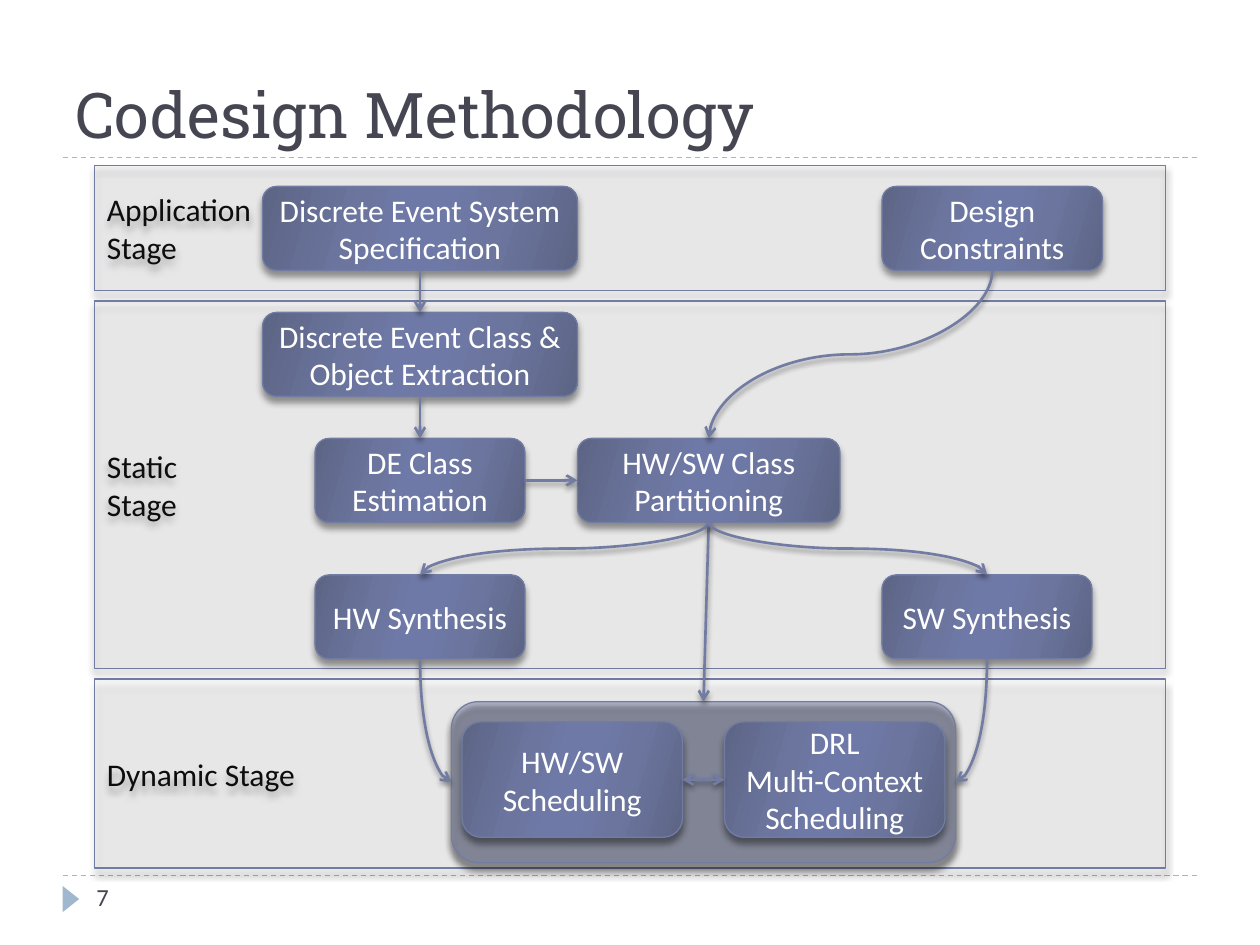
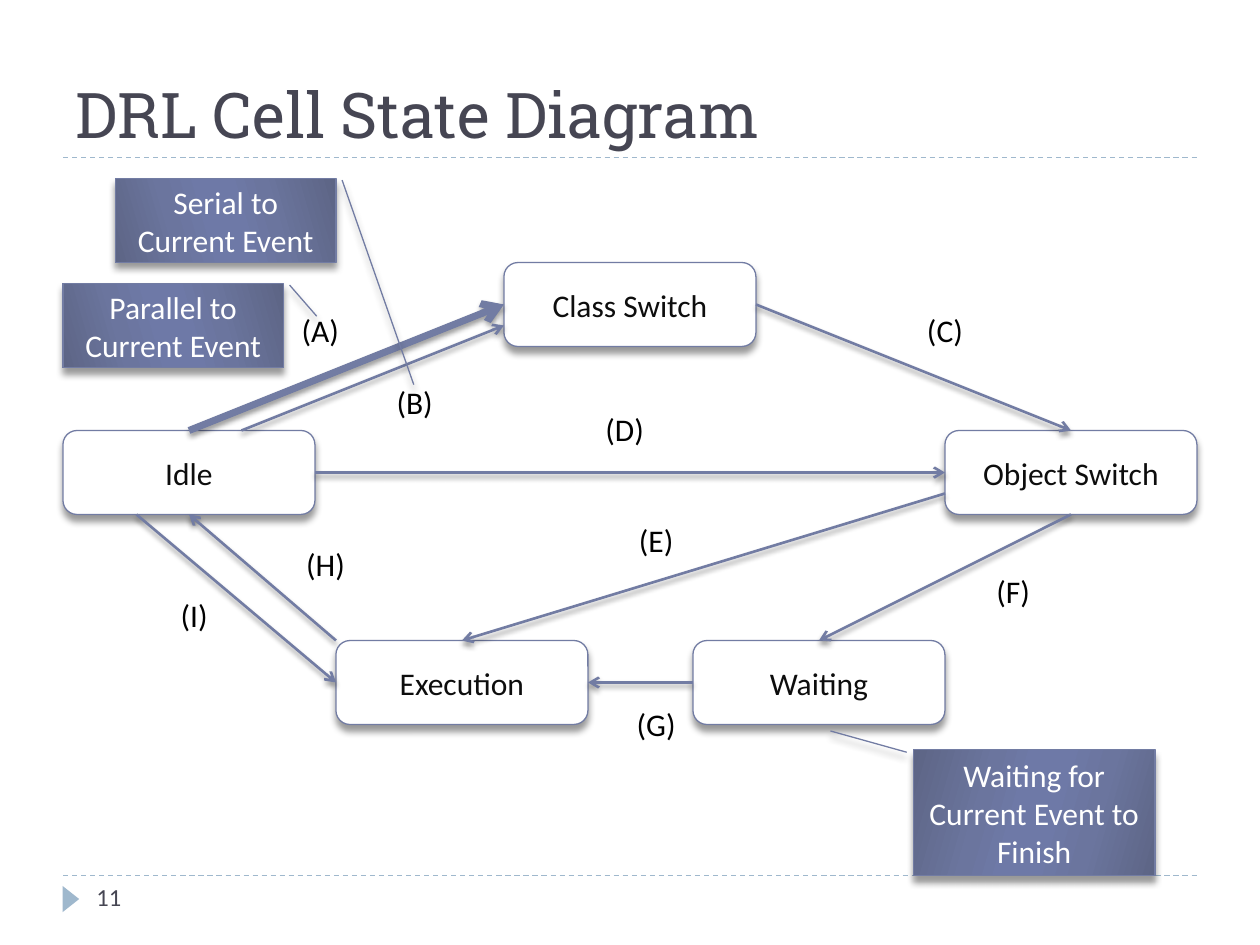
from dataclasses import dataclass
from typing import Any

from lxml import etree
from pptx import Presentation
from pptx import util as u
from pptx.dml import color
from pptx.enum import dml, shapes, text
from pptx.oxml import ns

Pt = u.Pt
SHAPE = shapes.MSO_SHAPE
LINK = shapes.MSO_CONNECTOR
MID = text.MSO_ANCHOR.MIDDLE
TOP, LEFT, BOTTOM, RIGHT = range(4)

HUES = {
    "white": "FFFFFF", "black": "000000", "ink": "0D0D0D", "title": "464653",
    "rule": "9FB8CD", "edge": "727CA3", "band": "D8D8DE",
    "rim": "5D6585", "mid": "6B759E", "core": "6E79A7",
}
SHEEN = [(0, "rim"), (30, "mid"), (45, "core"), (55, "core"), (73, "mid"), (100, "rim")]


def rgb(hue):
    return color.RGBColor.from_string(HUES[hue])


def sub(parent, tag, **attrs):
    """Append a DrawingML child element."""
    return etree.SubElement(parent, ns.qn("a:" + tag), {k: str(v) for k, v in attrs.items()})


def cast(shape, blur=0, dist=0):
    """Give a shape or connector a soft drop shadow, or none when blur is 0."""
    props = shape._element.spPr
    for old in props.findall(ns.qn("a:effectLst")):
        props.remove(old)
    list_ = sub(props, "effectLst")
    if blur:
        outer = sub(list_, "outerShdw", blurRad=Pt(blur), dist=Pt(dist),
                    dir=5400000, rotWithShape=0)
        sub(sub(outer, "srgbClr", val=HUES["black"]), "alpha", val=40000)


def paint(shape, fill, alpha=100):
    """Fill with one hue, or with the blue sheen."""
    props = shape._element.spPr
    if fill == "sheen":
        shape.fill.gradient()
        shape.fill.gradient_angle = 344
        stops = props.find(".//" + ns.qn("a:gsLst"))
        for old in list(stops):
            stops.remove(old)
        for pos, hue in SHEEN:
            sub(sub(stops, "gs", pos=pos * 1000), "srgbClr", val=HUES[hue])
        return
    shape.fill.solid()
    shape.fill.fore_color.rgb = rgb(fill)
    if alpha < 100:
        tint = props.find(ns.qn("a:solidFill"))[0]
        sub(tint, "alpha", val=alpha * 1000)


def write(shape, words, size=18, font="Calibri", hue="ink", align="CENTER", anchor=MID):
    frame = shape.text_frame
    frame.word_wrap = True
    frame.vertical_anchor = anchor
    frame.text = words
    for para in frame.paragraphs:
        para.alignment = getattr(text.PP_ALIGN, align)
        for run in para.runs:
            run.font.size = Pt(size)
            run.font.name = font
            run.font.color.rgb = rgb(hue)


def spot(end):
    """Turn an (x, y) pair or a (shape, side) pair into a point in points."""
    shape, side = end
    if isinstance(shape, (int, float)):
        return end
    part_x, part_y = {TOP: (.5, 0), LEFT: (0, .5), BOTTOM: (.5, 1), RIGHT: (1, .5)}[side]
    return (u.Emu(shape.left + int(shape.width * part_x)).pt,
            u.Emu(shape.top + int(shape.height * part_y)).pt)


@dataclass
class Deck:
    prs: Any
    slide: Any = None

    def start(self, title, number):
        """Open a slide with the shared rules, marker, title and number."""
        self.slide = self.prs.slides.add_slide(self.prs.slide_layouts[6])
        for y in (500.5, 90):
            rule = self.link((36, y), (684, y), hue="rule", width=.75, tail=False, shade=False)
            rule.line.dash_style = dml.MSO_LINE.DASH
        mark = self.shape(SHAPE.ISOSCELES_TRIANGLE, 33, 509, 15, 9.5, "rule", edge=None, shade=False)
        mark.rotation = 90
        self.label(title, 36, 12, 648, 78, size=36, font="Roboto Slab", hue="title",
                   align="LEFT", anchor=text.MSO_ANCHOR.BOTTOM)
        self.label(number, 48, 500.5, 156, 29, size=14, hue="title", align="LEFT")

    def shape(self, kind, x, y, w, h, fill, alpha=100, edge="edge", shade=True):
        item = self.slide.shapes.add_shape(kind, Pt(x), Pt(y), Pt(w), Pt(h))
        paint(item, fill, alpha)
        if edge:
            item.line.color.rgb = rgb(edge)
            item.line.width = Pt(.75)
        else:
            item.line.fill.background()
        cast(item, *((4, 3.4) if shade else ()))
        return item

    def label(self, words, x, y, w=42, h=29, **style):
        item = self.slide.shapes.add_textbox(Pt(x), Pt(y), Pt(w), Pt(h))
        write(item, words, **{"anchor": text.MSO_ANCHOR.TOP, "hue": "black", **style})

    def band(self, words, y, h):
        item = self.shape(SHAPE.RECTANGLE, 54, y, 612, h, "band", 20)
        write(item, words, align="LEFT")

    def box(self, words, x, y, w, h=48, fill="sheen", hue="white"):
        item = self.shape(SHAPE.ROUNDED_RECTANGLE, x, y, w, h, fill)
        write(item, words, hue=hue)
        return item

    def state(self, words, x, y):
        return self.box(words, x, y, 144, fill="white", hue="ink")

    def callout(self, words, x, y, w, h, tip, flip=False):
        item = self.shape(SHAPE.LINE_CALLOUT_1, x, y, w, h, "sheen")
        for i, value in enumerate((.019, -.028, *tip)):
            item.adjustments[i] = value
        if flip:
            item._element.spPr.xfrm.set("flipH", "1")
        write(item, words, hue="white")

    def trim(self, line, hue="edge", width=1.5, head=False, tail=True, shade=True):
        """Set a connector's stroke, arrowheads and shadow."""
        line.line.color.rgb = rgb(hue)
        line.line.width = Pt(width)
        stroke = line.line._get_or_add_ln()
        for tag, wanted in (("headEnd", head), ("tailEnd", tail)):
            if wanted:
                sub(stroke, tag, type="arrow")
        cast(line, *((3, 2) if shade else ()))
        return line

    def link(self, start, end, **style):
        """Draw a straight line, joined to a shape wherever an end names one."""
        line = self.slide.shapes.add_connector(
            LINK.STRAIGHT, *(Pt(v) for v in (*spot(start), *spot(end))))
        for (shape, side), join in ((start, line.begin_connect), (end, line.end_connect)):
            if not isinstance(shape, (int, float)):
                join(shape, side)
        return self.trim(line, **style)

    def curve(self, start, end, kind="curvedConnector3"):
        """Draw a curve that leaves downwards: a sideways curve turned upright."""
        (x1, y1), (x2, y2) = spot(start), spot(end)
        mid_x, mid_y = (x1 + x2) / 2, (y1 + y2) / 2
        half_w, half_h = abs(y2 - y1) / 2, abs(x2 - x1) / 2
        line = self.slide.shapes.add_connector(
            LINK.CURVE, Pt(mid_x - half_w), Pt(mid_y - half_h),
            Pt(mid_x + half_w), Pt(mid_y + half_h))
        props = line._element.spPr
        props.find(ns.qn("a:prstGeom")).set("prst", kind)
        frame = props.find(ns.qn("a:xfrm"))
        frame.set("rot", str((90 if x2 < x1 else 270) * 60000))
        if x2 > x1:
            frame.set("flipH", "1")
        self.trim(line)


def method(deck):
    deck.start("Codesign Methodology", "7")
    y = 94.5
    for words, h in (("Application\nStage", 71.5), ("Static\nStage", 210), ("Dynamic Stage", 108)):
        deck.band(words, y, h)
        y += h + 6

    rows = [106.5 + 72 * i for i in range(3)]
    system = deck.box("Discrete Event System Specification", 150, rows[0], 180)
    limits = deck.box("Design Constraints", 504, rows[0], 126)
    split = deck.box("HW/SW Class Partitioning", 330, rows[2], 150)
    extract = deck.box("Discrete Event Class & Object Extraction", 150, rows[1], 180)
    guess = deck.box("DE Class Estimation", 180, rows[2], 120)
    soft = deck.box("SW Synthesis", 504, 328.5, 120)
    hard = deck.box("HW Synthesis", 180, 328.5, 120)
    group = deck.shape(SHAPE.ROUNDED_RECTANGLE, 258, 401, 288, 92, "edge", 40)
    cells = deck.box("DRL\nMulti-Context Scheduling", 414, 412.5, 126, 66)
    plan = deck.box("HW/SW Scheduling", 264, 412.5, 126, 66)

    deck.link((system, BOTTOM), (extract, TOP))
    deck.link((extract, BOTTOM), (guess, TOP))
    deck.link((guess, RIGHT), (split, LEFT))
    deck.link((split, BOTTOM), (group, TOP))
    deck.link((plan, RIGHT), (cells, LEFT), head=True)
    deck.curve((limits, BOTTOM), (split, TOP))
    for part, side in ((hard, LEFT), (soft, RIGHT)):
        deck.curve((split, BOTTOM), (part, TOP))
        deck.curve((part, BOTTOM), (group, side), "curvedConnector2")


def states(deck):
    deck.start("DRL Cell State Diagram", "11")
    swap = deck.state("Object Switch", 540, 246)
    wait = deck.state("Waiting", 396, 366)
    work = deck.state("Execution", 192, 366)
    idle = deck.state("Idle", 36, 246)
    switch = deck.state("Class Switch", 288, 150)

    deck.link((idle, TOP), (switch, LEFT), width=4)
    for start, end in (
        ((138, 246), (288, 186)),
        ((switch, RIGHT), (swap, TOP)),
        ((idle, RIGHT), (swap, LEFT)),
        ((swap, BOTTOM), (wait, TOP)),
        ((wait, LEFT), (work, RIGHT)),
        ((192, 366), (idle, BOTTOM)),
        ((78, 294), (work, LEFT)),
        ((540, 282), (work, TOP)),
    ):
        deck.link(start, end)

    for mark, x, y in (
        ("A", 162, 174), ("B", 216, 215.5), ("C", 519, 174),
        ("D", 336, 231), ("E", 354, 294), ("F", 558, 323.5),
        ("G", 354, 399.5), ("H", 165, 308), ("I", 90, 337),
    ):
        deck.label(f"({mark})", x, y)

    deck.callout("Parallel to Current Event", 36, 162, 126, 48, (.39, -.151), flip=True)
    deck.callout("Waiting for Current Event to Finish", 522, 428.5, 138, 72, (-.15, -.344))
    deck.callout("Serial to Current Event", 66, 102, 126, 48, (2.455, -.353), flip=True)


def main():
    prs = Presentation()
    prs.slide_width, prs.slide_height = Pt(720), Pt(540)
    deck = Deck(prs)
    method(deck)
    states(deck)
    prs.save("out.pptx")


if __name__ == "__main__":
    main()
